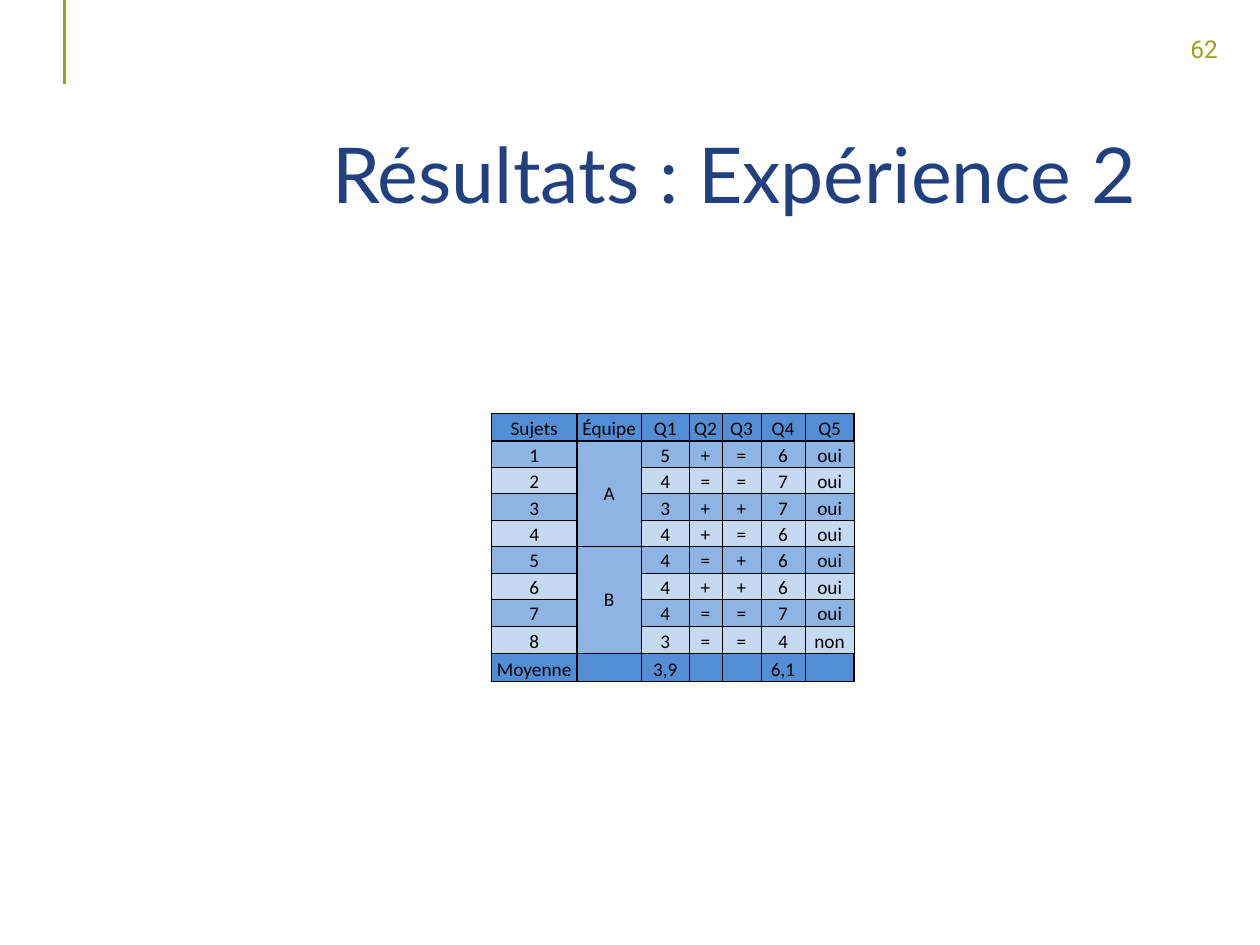
from lxml.etree import SubElement as Sub
from pptx import Presentation
from pptx.dml.color import RGBColor
from pptx.enum.shapes import MSO_CONNECTOR as Link
from pptx.enum.text import MSO_ANCHOR as Anchor, PP_ALIGN as Align
from pptx.oxml.ns import qn
from pptx.util import Inches, Pt

HEAD, DARK, LIGHT = "538ED5", "8DB4E3", "C5D9F1"
OLIVE, NAVY, BLACK = "9DA112", "224080", "000000"
WIDTHS = [0.68, 0.51, 0.38, 0.26, 0.31, 0.35, 0.39]
HEIGHTS = [0.22] + [0.21] * 7 + [0.22] * 2
ROWS = [
    ["Sujets", "Équipe", "Q1", "Q2", "Q3", "Q4", "Q5"],
    ["1", "A", "5", "+", "=", "6", "oui"],
    ["2", "", "4", "=", "=", "7", "oui"],
    ["3", "", "3", "+", "+", "7", "oui"],
    ["4", "", "4", "+", "=", "6", "oui"],
    ["5", "B", "4", "=", "+", "6", "oui"],
    ["6", "", "4", "+", "+", "6", "oui"],
    ["7", "", "4", "=", "=", "7", "oui"],
    ["8", "", "3", "=", "=", "4", "non"],
    ["Moyenne", "", "3,9", "", "", "6,1", ""],
]
TEAMS = [(1, 4), (5, 8)]


def color(code):
    return RGBColor.from_string(code)


class Page:
    def __init__(self, slide):
        self.shapes = slide.shapes
        self.font, self.size = "Calibri", 11

    def style(self, para, font, size, code, align):
        para.alignment = align
        for run in para.runs:
            run.font.name = font
            run.font.size = Pt(size)
            run.font.color.rgb = color(code)

    def line(self, x1, y1, x2, y2, code, width):
        link = self.shapes.add_connector(
            Link.STRAIGHT, Inches(x1), Inches(y1), Inches(x2), Inches(y2))
        link.line.color.rgb = color(code)
        link.line.width = Pt(width)
        Sub(link._element.spPr, qn("a:effectLst"))

    def text(self, words, box, font, size, code, align=Align.LEFT,
             anchor=Anchor.TOP, wrap=True, space=1.0):
        frame = self.shapes.add_textbox(*map(Inches, box)).text_frame
        frame.text = words
        frame.word_wrap = wrap
        frame.vertical_anchor = anchor
        para = frame.paragraphs[0]
        para.line_spacing = space
        self.style(para, font, size, code, align)

    def border(self, cell, widths):
        props = cell._tc.get_or_add_tcPr()
        for side, width in zip("LRTB", widths):
            edge = Sub(props, qn(f"a:ln{side}"), w=str(Pt(width)))
            fill = Sub(edge, qn("a:solidFill"))
            Sub(fill, qn("a:srgbClr"), val=BLACK)

    def cell(self, cell, words, code, anchor):
        cell.fill.solid()
        cell.fill.fore_color.rgb = color(code)
        cell.margin_left = cell.margin_right = 0
        cell.margin_top = cell.margin_bottom = 0
        cell.vertical_anchor = anchor
        cell.text_frame.text = words
        para = cell.text_frame.paragraphs[0]
        self.style(para, self.font, self.size, BLACK, Align.CENTER)
        Sub(para._p, qn("a:endParaRPr"), sz=str(self.size * 100))

    def table(self, rows, x, y, widths, heights, teams):
        last = len(rows) - 1
        grid = self.shapes.add_table(
            len(rows), len(widths), Inches(x), Inches(y),
            Inches(sum(widths)), Inches(sum(heights))).table
        for col, width in zip(grid.columns, widths):
            col.width = Inches(width)
        for row, height in zip(grid.rows, heights):
            row.height = Inches(height)
        for top, end in teams:
            grid.cell(top, 1).merge(grid.cell(end, 1))

        def across(r):
            return 1 if r in (0, 1, last, last + 1) else 0.5

        def down(r, c):
            outer = c == len(widths) and r in (0, last)
            return 1 if c < 3 or outer else 0.5

        for r, row in enumerate(rows):
            for c, words in enumerate(row):
                cell = grid.cell(r, c)
                joined = cell.is_merge_origin or cell.is_spanned
                if not cell.is_spanned:
                    end = r + (cell.span_height if joined else 1)
                    self.border(cell, (down(r, c), down(r, c + 1),
                                       across(r), across(end)))
                if r in (0, last):
                    code = HEAD
                else:
                    code = DARK if joined or r % 2 else LIGHT
                anchor = Anchor.MIDDLE if joined else Anchor.BOTTOM
                self.cell(cell, words, code, anchor)


def main():
    deck = Presentation()
    deck.slide_width, deck.slide_height = Inches(10), Inches(7.5)
    page = Page(deck.slides.add_slide(deck.slide_layouts[6]))
    page.line(0.51, 0, 0.51, 0.67, OLIVE, 1.5)
    page.text("62", (9.35, 0.22, 0.43, 0.33), "Roboto", 14, OLIVE, wrap=False)
    page.text("Résultats : Expérience 2", (1.06, 0.79, 8.06, 1.25), "Lato", 44,
              NAVY, Align.RIGHT, Anchor.MIDDLE, space=0.9)
    page.table(ROWS, 3.9, 3.28, WIDTHS, HEIGHTS, TEAMS)
    deck.save("out.pptx")


if __name__ == "__main__":
    main()
